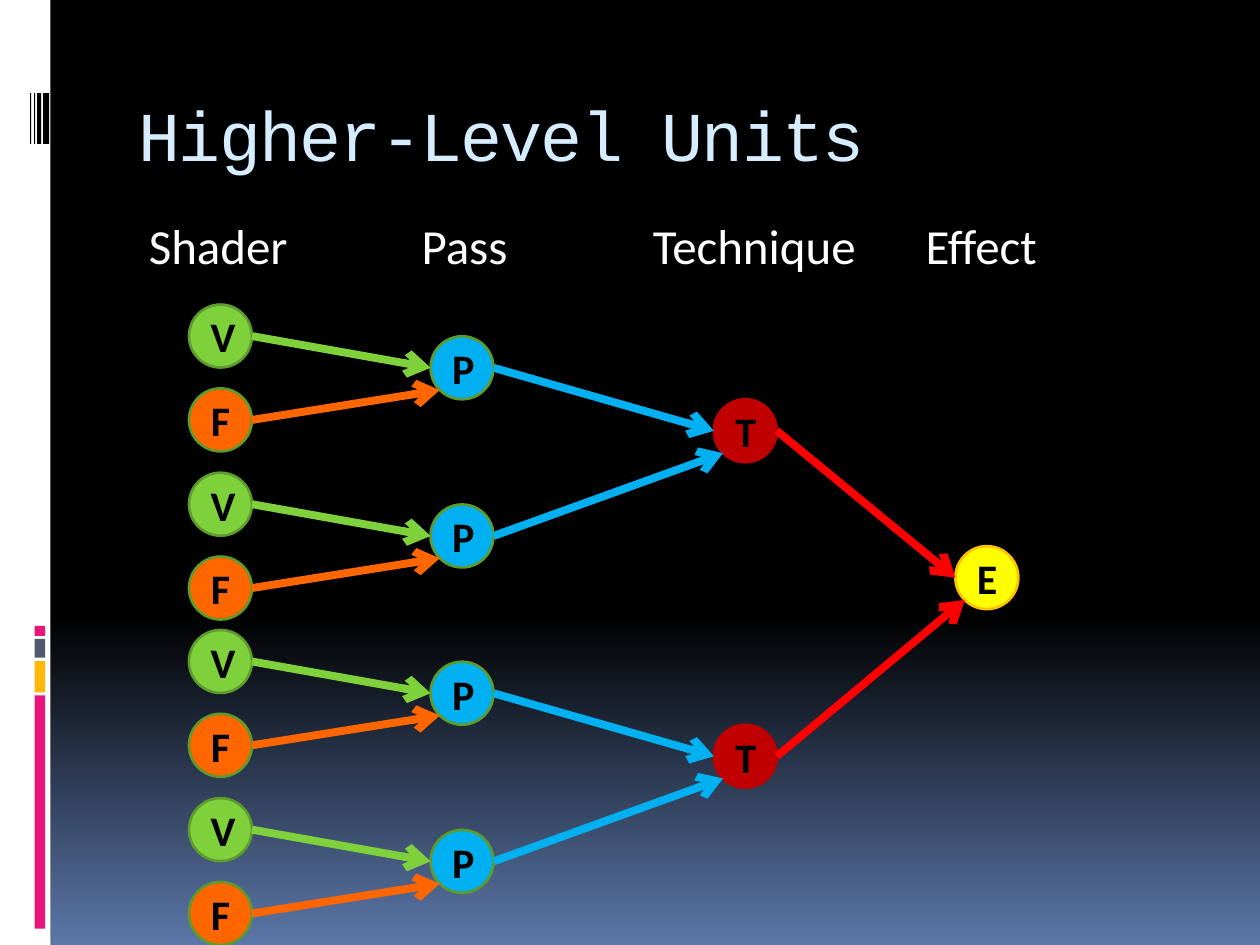
from dataclasses import dataclass

from lxml import etree
from pptx import Presentation
from pptx.dml.color import RGBColor
from pptx.enum.shapes import MSO_CONNECTOR, MSO_SHAPE
from pptx.enum.text import MSO_ANCHOR, MSO_AUTO_SIZE, PP_ALIGN
from pptx.oxml.ns import qn
from pptx.util import Cm, Pt

RECT, OVAL = MSO_SHAPE.RECTANGLE, MSO_SHAPE.OVAL
LINE = MSO_CONNECTOR.STRAIGHT
MID, LEFT, CENTER = MSO_ANCHOR.MIDDLE, PP_ALIGN.LEFT, PP_ALIGN.CENTER
GROW, FIXED = MSO_AUTO_SIZE.SHAPE_TO_FIT_TEXT, MSO_AUTO_SIZE.NONE


@dataclass(frozen=True)
class Theme:
    black: str = "000000"
    white: str = "FFFFFF"
    dusk: str = "5B77A8"
    title: str = "D6ECFF"
    pink: str = "EA157A"
    gold: str = "FEB80A"
    slate: str = "4E5B6F"
    green: str = "7FD13B"
    edge: str = "5E9B2C"
    orange: str = "FF6600"
    blue: str = "00B0F0"
    wine: str = "C00000"
    red: str = "FF0000"
    yellow: str = "FFFF00"
    amber: str = "FFC000"
    mono: str = "Courier New"
    sans: str = "Calibri"
    title_pt: float = 40
    head_pt: float = 28
    node_pt: float = 24
    edge_pt: float = 1.5
    arrow_pt: float = 4.5


T = Theme()
SIZE = 1.27  # node diameter, cm
NODES = {  # letter: fill, outline
    "V": (T.green, T.edge),
    "F": (T.orange, T.edge),
    "P": (T.blue, T.edge),
    "T": (T.wine, T.wine),
    "E": (T.yellow, T.amber),
}


def rgb(code):
    return RGBColor.from_string(code)


def cms(*nums):
    return [Cm(n) for n in nums]


def add_run(para, text, font, size, color, bold=False):
    run = para.add_run()
    run.text = text
    run.font.name, run.font.size = font, Pt(size)
    run.font.bold = bold
    run.font.color.rgb = rgb(color)
    return run


def add_bar(slide, box, color):
    bar = slide.shapes.add_shape(RECT, *cms(*box))
    bar.shadow.inherit = False
    bar.fill.solid()
    bar.fill.fore_color.rgb = rgb(color)
    bar.line.fill.background()


def add_node(slide, x, y, text):
    """Draw a lettered circle and return its corner."""
    fill, edge = NODES[text]
    node = slide.shapes.add_shape(OVAL, *cms(x, y, SIZE, SIZE))
    node.shadow.inherit = False
    node.fill.solid()
    node.fill.fore_color.rgb = rgb(fill)
    node.line.color.rgb = rgb(edge)
    node.line.width = Pt(T.edge_pt)
    node.text_frame.vertical_anchor = MID
    para = node.text_frame.paragraphs[0]
    para.alignment = CENTER
    add_run(para, text, T.sans, T.node_pt, T.black, True)
    return x, y


def add_arrow(slide, start, end, color):
    link = slide.shapes.add_connector(LINE, *cms(*start, *end))
    link.line.color.rgb = rgb(color)
    link.line.width = Pt(T.arrow_pt)
    tail = etree.SubElement(link.line._get_or_add_ln(), qn("a:tailEnd"))
    tail.set("type", "arrow")
    etree.SubElement(link._element.spPr, qn("a:effectLst"))


def join(slide, upper, lower, goal, colors):
    """Lead two nodes to the left and lower-left points of a goal node."""
    half = SIZE / 2
    near, far = half * (1 - 0.5 ** 0.5), half * (1 + 0.5 ** 0.5)
    ends = ((0, half), (near, far))
    for (x, y), (dx, dy), color in zip((upper, lower), ends, colors):
        add_arrow(slide, (x + SIZE, y + half),
                  (goal[0] + dx, goal[1] + dy), color)


def add_back(slide):
    fill = slide.background.fill
    fill.gradient()
    fill.gradient_angle = 270
    stops = zip(fill.gradient_stops, (0.65, 1), (T.black, T.dusk))
    for stop, place, color in stops:
        stop.position = place
        stop.color.rgb = rgb(color)


def add_side(slide, x, y, width, height):
    add_bar(slide, (x, y, width, height), T.white)
    # Coloured blocks
    blocks = ((12.62, 0.2, T.pink), (12.88, 0.38, T.slate),
              (13.33, 0.63, T.gold), (14.02, 4.7, T.pink))
    for dy, tall, color in blocks:
        add_bar(slide, (x + 0.7, y + dy, 0.21, tall), color)
    # Black stripes beside the title
    for dx, wide in ((0.61, 0.02), (0.69, 0.02), (0.75, 0.08), (0.87, 0.12)):
        add_bar(slide, (x + dx, y + 1.88, wide, 1.02), T.black)


def add_title(slide, x, y, width, height):
    title = slide.shapes.title
    title.left, title.top, title.width, title.height = cms(x, y, width, height)
    frame = title.text_frame
    frame.auto_size = FIXED
    frame.vertical_anchor = MID
    para = frame.paragraphs[0]
    para.alignment = LEFT
    run = add_run(para, "Higher-Level Units", T.mono, T.title_pt, T.title)
    run.font._element.set("spc", "-100")


def add_heads(slide, x, y, width, height):
    heads = ((0, "Shader"), (5.5, "Pass"), (10.16, "Technique"),
             (15.66, "Effect"))
    for dx, text in heads:
        box = slide.shapes.add_textbox(*cms(x + dx, y, width, height))
        frame = box.text_frame
        frame.word_wrap = True
        frame.auto_size = GROW
        add_run(frame.paragraphs[0], text, T.sans, T.head_pt, T.white)


def add_pass(slide, x, y):
    """Join a vertex and a fragment shader into a pass."""
    vert = add_node(slide, x, y, "V")
    frag = add_node(slide, x, y + 1.69, "F")
    goal = add_node(slide, x + 4.87, y + 0.64, "P")
    join(slide, vert, frag, goal, (T.green, T.orange))
    return goal


def add_tech(slide, x, y):
    """Join two passes into a technique."""
    upper, lower = [add_pass(slide, x, y + dy) for dy in (0, 3.39)]
    goal = add_node(slide, x + 10.58, y + 1.91, "T")
    join(slide, upper, lower, goal, (T.blue, T.blue))
    return goal


def add_tree(slide, x, y):
    """Join two techniques into the effect."""
    upper, lower = [add_tech(slide, x, y + dy) for dy in (0, 6.56)]
    goal = add_node(slide, x + 15.45, y + 4.87, "E")
    join(slide, upper, lower, goal, (T.red, T.red))


def main():
    deck = Presentation()
    deck.slide_width, deck.slide_height = cms(25.4, 19.05)
    slide = deck.slides.add_slide(deck.slide_layouts[5])
    add_back(slide)
    add_side(slide, 0, 0, 1.02, 19.05)
    add_title(slide, 2.54, 1.42, 21.59, 2.54)
    add_heads(slide, 2.75, 4.23, 5.29, 1.45)
    add_tree(slide, 3.81, 6.14)
    deck.save("out.pptx")


if __name__ == "__main__":
    main()
